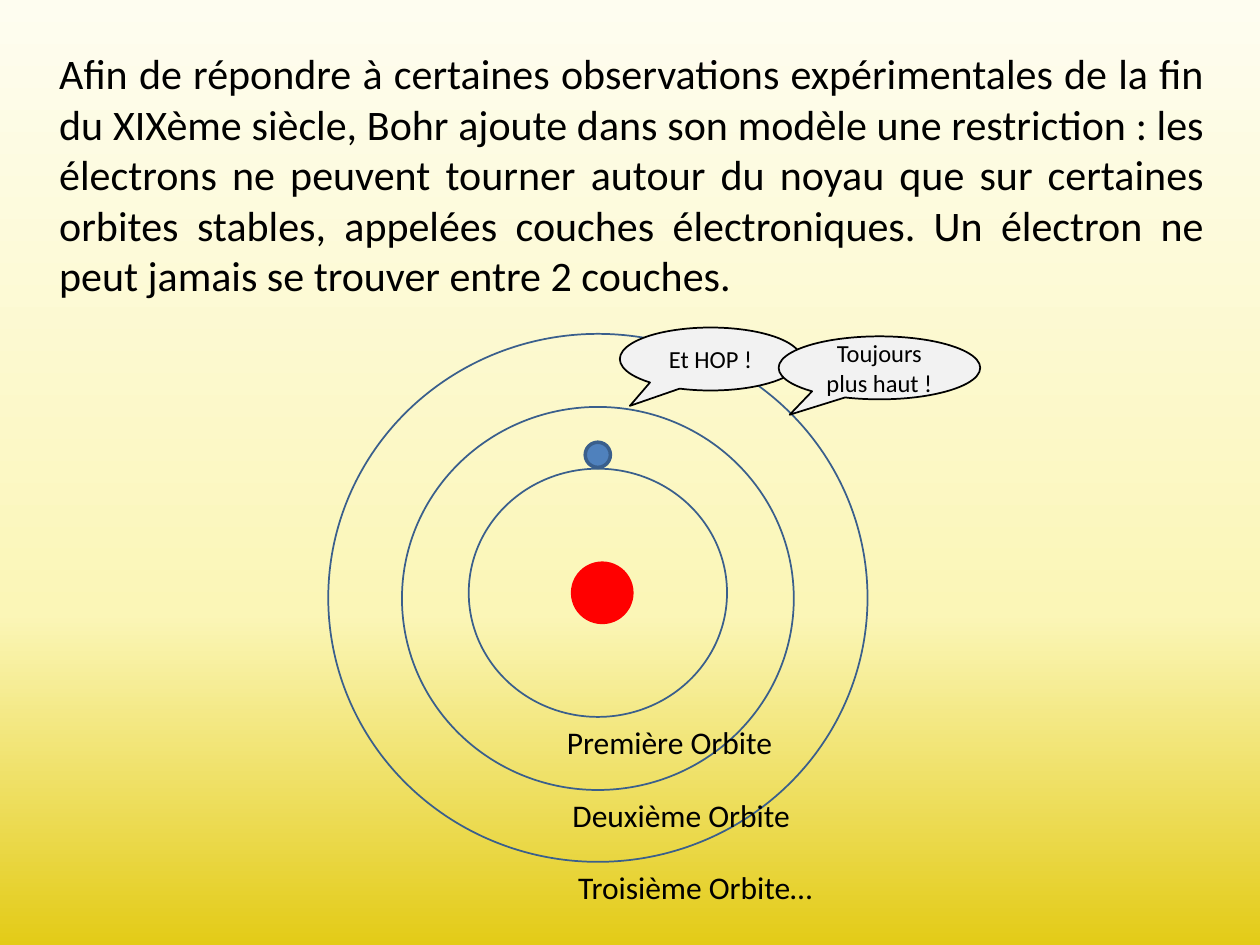
from copy import deepcopy

from pptx import Presentation
from pptx import util as u
from pptx.dml.color import RGBColor
from pptx.enum import shapes, text

BLACK = RGBColor(0x00, 0x00, 0x00)
ELECTRON_BLUE = RGBColor(0x4F, 0x81, 0xBD)
ORBIT_BLUE = RGBColor(0x3A, 0x5F, 0x8C)
NUCLEUS_RED = RGBColor(0xFF, 0x00, 0x00)
BUBBLE_GREY = RGBColor(0xF2, 0xF2, 0xF2)
BACKDROP = (
    (0, RGBColor(0xFE, 0xFD, 0xF0)),
    (0.65, RGBColor(0xFB, 0xF6, 0xB7)),
    (1, RGBColor(0xE3, 0xCB, 0x17)),
)
COLUMNS, ROWS = 100, 75
CENTRE = 47.45
INTRO = (
    "Afin de répondre à certaines observations expérimentales de la fin du "
    "XIXème siècle, Bohr ajoute dans son modèle une restriction : les électrons "
    "ne peuvent tourner autour du noyau que sur certaines orbites stables, "
    "appelées couches électroniques. Un électron ne peut jamais se trouver "
    "entre 2 couches."
)


class AtomSlide:
    """Draws the slide on a grid of COLUMNS by ROWS in one consistent style."""

    font_name = "Calibri"

    def __init__(self, deck):
        self.column = deck.slide_width / COLUMNS
        self.row = deck.slide_height / ROWS
        self.slide = deck.slides.add_slide(deck.slide_layouts[2])

    def box(self, left, top, width, height):
        return (round(left * self.column), round(top * self.row),
                round(width * self.column), round(height * self.row))

    def set_words(self, frame, words, size, align):
        frame.word_wrap = True
        frame.text = words
        paragraph = frame.paragraphs[0]
        paragraph.alignment = align
        paragraph.space_before = u.Pt(0)
        paragraph.font.name = self.font_name
        paragraph.font.size = u.Pt(size)
        paragraph.font.color.rgb = BLACK

    def backdrop(self, stops):
        fill = self.slide.background.fill
        fill.gradient()
        fill.gradient_angle = 270
        stop_list = self.slide.element.xpath(".//p:bg//a:gsLst")[0]
        stop_list.append(deepcopy(stop_list[-1]))
        for stop, (position, colour) in zip(fill.gradient_stops, stops):
            stop.position = position
            stop.color.rgb = colour

    def intro(self, words, *place):
        title, body = self.slide.placeholders
        title.element.getparent().remove(title.element)
        body.left, body.top, body.width, body.height = self.box(*place)
        frame = body.text_frame
        frame.auto_size = text.MSO_AUTO_SIZE.NONE
        frame.vertical_anchor = text.MSO_ANCHOR.TOP
        self.set_words(frame, words, 24, text.PP_ALIGN.JUSTIFY)

    def shape(self, kind, place, fill, line, weight=1):
        drawn = self.slide.shapes.add_shape(kind, *self.box(*place))
        drawn.shadow.inherit = False
        if fill is None:
            drawn.fill.background()
        else:
            drawn.fill.solid()
            drawn.fill.fore_color.rgb = fill
        drawn.line.color.rgb = line
        drawn.line.width = u.Pt(weight)
        return drawn

    def circle(self, x, y, width, height, fill, line, weight=1):
        place = x - width / 2, y - height / 2, width, height
        self.shape(shapes.MSO_SHAPE.OVAL, place, fill, line, weight)

    def label(self, words, *place):
        frame = self.slide.shapes.add_textbox(*self.box(*place)).text_frame
        self.set_words(frame, words, 18, text.PP_ALIGN.LEFT)

    def bubble(self, words, *place):
        callout = self.shape(shapes.MSO_SHAPE.OVAL_CALLOUT, place, BUBBLE_GREY, BLACK)
        callout.adjustments[0] = -0.445
        callout.adjustments[1] = 0.744
        callout.text_frame.vertical_anchor = text.MSO_ANCHOR.MIDDLE
        self.set_words(callout.text_frame, words, 14, text.PP_ALIGN.CENTER)


def main():
    deck = Presentation()
    deck.slide_width, deck.slide_height = u.Inches(10), u.Inches(7.5)
    atom = AtomSlide(deck)
    atom.backdrop(BACKDROP)
    atom.intro(INTRO, 3.7, 3.3, 92.9, 25.2)

    atom.circle(CENTRE, 36.1, 2, 2, ELECTRON_BLUE, ORBIT_BLUE, 2)
    atom.circle(47.8, 47.05, 4.7, 4.7, NUCLEUS_RED, NUCLEUS_RED, 2)
    orbits = (
        ("Première Orbite", 47.05, 20.5, 19.7),
        ("Deuxième Orbite", 47.5, 31.1, 30.4),
        ("Troisième Orbite…", 47.45, 42.8, 41.9),
    )
    for _, y, width, height in orbits:
        atom.circle(CENTRE, y, width, height, None, ORBIT_BLUE)
    for step, (name, *_) in enumerate(orbits):
        atom.label(name, 44 + 0.45 * step, 56.9 + 5.75 * step, 37.8, 4)

    atom.bubble("Et HOP !", 49.2, 26, 14.4, 5)
    atom.bubble("Toujours plus haut !", 61.8, 26.7, 16, 5)
    deck.save("out.pptx")


if __name__ == "__main__":
    main()
